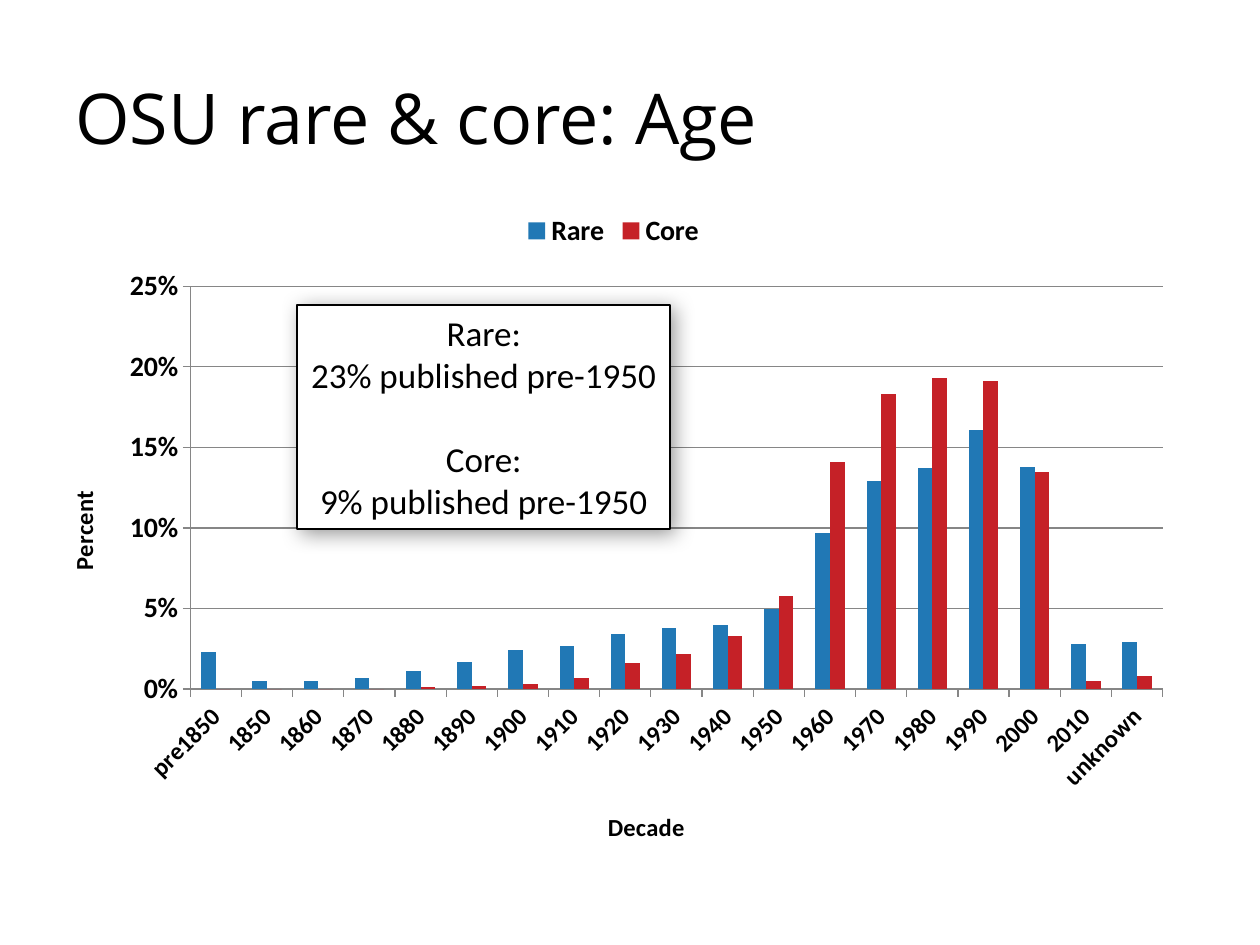
import pptx
import pptx.chart.data
import pptx.dml.color
import pptx.enum.chart
import pptx.enum.text
import pptx.oxml
import pptx.util
from pptx.util import Inches

Pt = pptx.util.Pt
Anchor = pptx.enum.text.MSO_ANCHOR
Align = pptx.enum.text.PP_ALIGN


def color(code):
    return pptx.dml.color.RGBColor.from_string(code)


def write(frame, text, size=20, font="Calibri", bold=False, align=None, gap=0, new=False):
    para = frame.add_paragraph() if new else frame.paragraphs[0]
    para.alignment = align
    if gap:
        para.space_before = Pt(gap)
    run = para.add_run()
    run.text = text
    run.font.size = Pt(size)
    run.font.name = font
    run.font.bold = bold
    run.font.color.rgb = color("000000")


deck = pptx.Presentation()
deck.slide_width = Inches(10)
deck.slide_height = Inches(7.5)
slide = deck.slides.add_slide(deck.slide_layouts[6])

data = pptx.chart.data.CategoryChartData(number_format="0%")
data.categories = ["pre1850"] + [str(year) for year in range(1850, 2020, 10)] + ["unknown"]
series = [
    ("Rare", "2178B5", [0.023, 0.005, 0.005, 0.007, 0.011, 0.017, 0.024, 0.027, 0.034, 0.038,
                        0.04, 0.05, 0.097, 0.129, 0.137, 0.161, 0.138, 0.028, 0.029]),
    ("Core", "C52127", [0, 0, 0, 0, 0.001, 0.002, 0.003, 0.007, 0.016, 0.022,
                        0.033, 0.058, 0.141, 0.183, 0.193, 0.191, 0.135, 0.005, 0.008]),
]
for name, fill, vals in series:
    data.add_series(name, vals)

chart = slide.shapes.add_chart(
    pptx.enum.chart.XL_CHART_TYPE.COLUMN_CLUSTERED,
    Inches(0.33), Inches(1.58), Inches(9.08), Inches(5.33), data).chart
chart.has_title = False
chart.font.name = "Calibri"
chart.font.size = Pt(10)
chart.font.color.rgb = color("000000")

plot = chart.plots[0]
plot.vary_by_categories = False
plot.gap_width = 150
plot.overlap = 0
for bars, (name, fill, vals) in zip(plot.series, series):
    bars.format.fill.solid()
    bars.format.fill.fore_color.rgb = color(fill)
    bars.invert_if_negative = False

chart.has_legend = True
legend = chart.legend
legend.position = pptx.enum.chart.XL_LEGEND_POSITION.TOP
legend.include_in_layout = False
legend.font.size = Pt(16)
legend.font.bold = True

across, up = chart.category_axis, chart.value_axis
for axis, name, size in [(across, "Decade", 14), (up, "Percent", 16)]:
    write(axis.axis_title.text_frame, name, size=14, bold=True)
    axis.tick_labels.font.size = Pt(size)
    axis.tick_labels.font.bold = True
    axis.major_tick_mark = pptx.enum.chart.XL_TICK_MARK.OUTSIDE
    axis.format.line.color.rgb = color("868686")
across.has_major_gridlines = False
across._element.txPr.bodyPr.set("rot", "-2700000")
up.minimum_scale, up.maximum_scale, up.major_unit = 0, 0.25, 0.05
up.tick_labels.number_format = "0%"
up.tick_labels.number_format_is_linked = False
up.major_gridlines.format.line.color.rgb = color("868686")

area = chart._chartSpace.chart.plotArea
for old in area.xpath("c:layout"):
    area.remove(old)
area.insert(0, pptx.oxml.parse_xml(
    '<c:layout xmlns:c="http://schemas.openxmlformats.org/drawingml/2006/chart">'
    '<c:manualLayout><c:layoutTarget val="inner"/><c:xMode val="edge"/><c:yMode val="edge"/>'
    '<c:x val="0.13"/><c:y val="0.13"/><c:w val="0.85"/><c:h val="0.6"/>'
    '</c:manualLayout></c:layout>'))

title = slide.shapes.add_textbox(Inches(0.5), Inches(0.3), Inches(9), Inches(1.25)).text_frame
title.word_wrap = True
title.vertical_anchor = Anchor.MIDDLE
write(title, "OSU rare & core: Age", size=40, font="Open Sans")

note = slide.shapes.add_shape(
    pptx.enum.shapes.MSO_SHAPE.RECTANGLE, Inches(2.36), Inches(2.42), Inches(2.96), Inches(1.78))
note.fill.solid()
note.fill.fore_color.rgb = color("FFFFFF")
note.line.color.rgb = color("000000")
note.line.width = Pt(1)
note._element.spPr.append(pptx.oxml.parse_xml(
    '<a:effectLst xmlns:a="http://schemas.openxmlformats.org/drawingml/2006/main">'
    '<a:outerShdw blurRad="152400" dist="38100" dir="2700000" algn="tl" rotWithShape="0">'
    '<a:srgbClr val="000000"><a:alpha val="40000"/></a:srgbClr></a:outerShdw></a:effectLst>'))
frame = note.text_frame
frame.word_wrap = False
frame.auto_size = pptx.enum.text.MSO_AUTO_SIZE.SHAPE_TO_FIT_TEXT
frame.vertical_anchor = Anchor.TOP
lines = [("Rare:", 0), ("23% published pre-1950", 0), ("Core:", 24), ("9% published pre-1950", 0)]
for i, (line, gap) in enumerate(lines):
    write(frame, line, align=Align.CENTER, gap=gap, new=i > 0)

deck.save("out.pptx")
